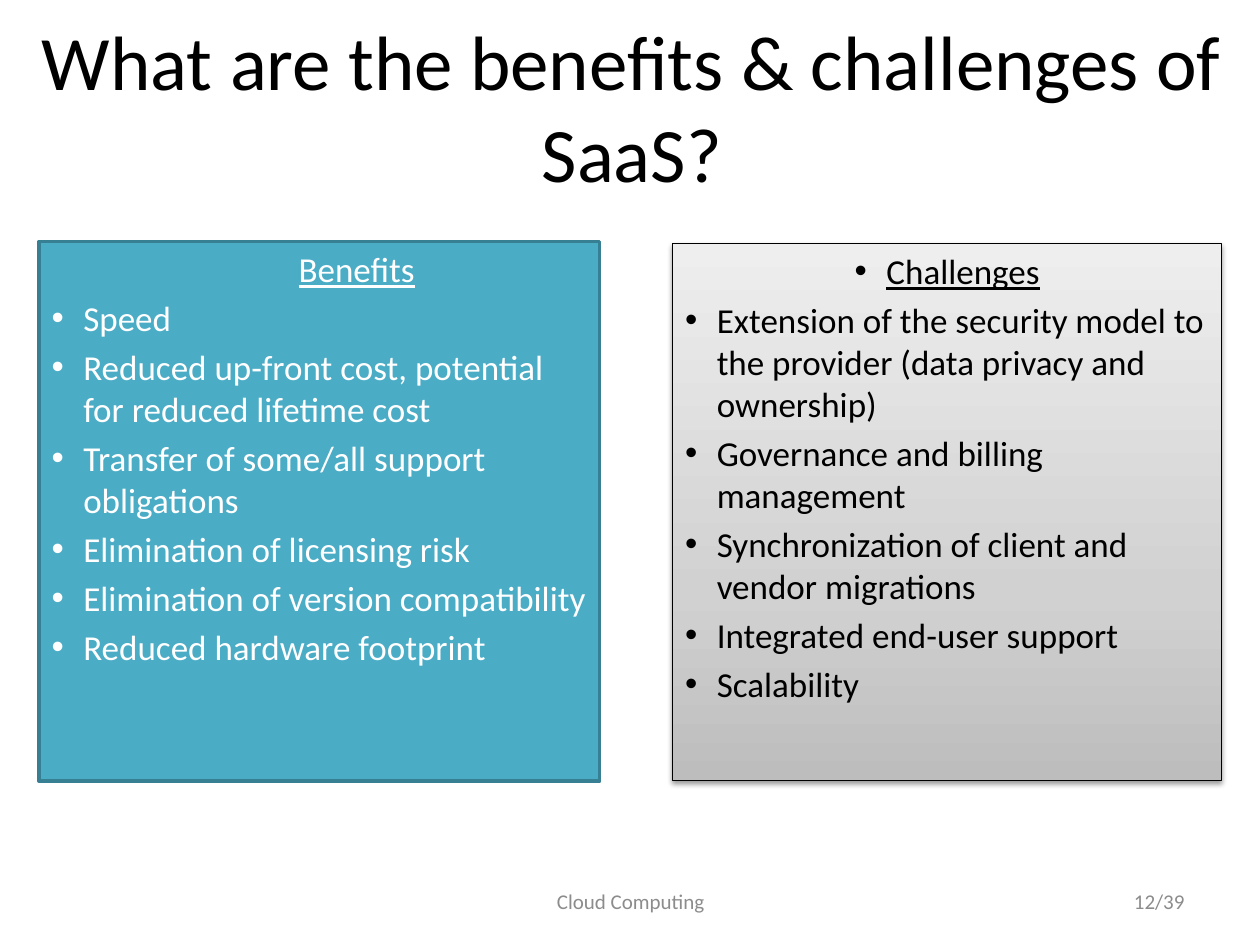
"""Build the slide on the benefits and challenges of SaaS."""
from copy import deepcopy

from lxml.etree import SubElement
from pptx import Presentation
from pptx.dml.color import RGBColor
from pptx.enum.shapes import MSO_SHAPE as Shape
from pptx.enum.text import MSO_ANCHOR as Anchor, PP_ALIGN as Align
from pptx.oxml.ns import qn
from pptx.util import Cm, Pt

LABELS = [
    ("What are the benefits & challenges of SaaS?", (0.51, 0.53, 24.46, 3.2), 44, "000000", Align.CENTER),
    ("12/39", (18.21, 17.65, 5.92, 1.02), 12, "8C8C8C", Align.RIGHT),
    ("Cloud Computing", (8.69, 17.65, 8.05, 1.02), 12, "8C8C8C", Align.CENTER),
]
BENEFITS = [
    "Benefits",
    "Speed",
    "Reduced up-front cost, potential for reduced lifetime cost",
    "Transfer of some/all support obligations",
    "Elimination of licensing risk",
    "Elimination of version compatibility",
    "Reduced hardware footprint",
]
CHALLENGES = [
    "Challenges",
    "Extension of the security model to the provider (data privacy and ownership)",
    "Governance and billing management",
    "Synchronization of client and vendor migrations",
    "Integrated end-user support",
    "Scalability",
]
GRADIENT = [(0, "BDBDBD"), (0.35, "D1D1D1"), (1, "EEEEEE")]


def color(value):
    return RGBColor.from_string(value)


def style(paragraph, size, font_color, align):
    paragraph.alignment = align
    paragraph.font.name = "Calibri"
    paragraph.font.size = Pt(size)
    paragraph.font.color.rgb = color(font_color)


def indent(paragraph, left, hanging, bullet):
    properties = paragraph._p.get_or_add_pPr()
    properties.set("marL", str(Cm(left)))
    properties.set("indent", str(-Cm(hanging)))
    if bullet:
        SubElement(properties, qn("a:buFont"), typeface="Arial")
        SubElement(properties, qn("a:buChar"), char="•")
    else:
        SubElement(properties, qn("a:buNone"))


def add_label(slide, text, box, size, font_color, align):
    frame = slide.shapes.add_textbox(*map(Cm, box)).text_frame
    frame.word_wrap = True
    frame.vertical_anchor = Anchor.MIDDLE
    frame.text = text
    style(frame.paragraphs[0], size, font_color, align)


def add_panel(slide, lines, box, font_color, line_color, line_width, bullet_heading):
    shape = slide.shapes.add_shape(Shape.RECTANGLE, *map(Cm, box))
    shape.shadow.inherit = False
    shape.line.color.rgb = color(line_color)
    shape.line.width = Pt(line_width)
    frame = shape.text_frame
    frame.word_wrap = True
    frame.vertical_anchor = Anchor.TOP
    frame.text = "\n".join(lines)
    for index, paragraph in enumerate(frame.paragraphs):
        heading = index == 0
        if heading and not bullet_heading:
            indent(paragraph, 2.29, 0.79, False)
        else:
            indent(paragraph, 0.64, 0.64, True)
        style(paragraph, 20, font_color, Align.CENTER if heading else Align.LEFT)
        paragraph.font.underline = heading
        if not heading:
            paragraph.space_before = Pt(4)
    return shape


def fill_gradient(shape, stops):
    shape.fill.gradient()
    shape.fill.gradient_angle = 90
    stop_list = shape._element.spPr.find(".//" + qn("a:gsLst"))
    stop_list.append(deepcopy(stop_list[-1]))
    for stop, (position, stop_color) in zip(shape.fill.gradient_stops, stops):
        stop.position = position
        stop.color.rgb = color(stop_color)


def add_shadow(shape):
    effects = shape._element.spPr.find(qn("a:effectLst"))
    shadow = SubElement(effects, qn("a:outerShdw"), blurRad=str(Pt(3.1)),
                        dist=str(Pt(1.6)), dir="5400000", rotWithShape="0")
    shadow_color = SubElement(shadow, qn("a:srgbClr"), val="000000")
    SubElement(shadow_color, qn("a:alpha"), val="38000")


def main():
    presentation = Presentation()
    presentation.slide_width, presentation.slide_height = Cm(25.4), Cm(19.05)
    slide = presentation.slides.add_slide(presentation.slide_layouts[6])
    for label in LABELS:
        add_label(slide, *label)
    benefits = add_panel(slide, BENEFITS, (0.79, 4.87, 11.3, 10.88), "FFFFFF", "377F92", 2, False)
    benefits.fill.solid()
    benefits.fill.fore_color.rgb = color("4BACC6")
    challenges = add_panel(slide, CHALLENGES, (13.56, 4.91, 11.07, 10.82), "000000", "000000", 0.75, True)
    fill_gradient(challenges, GRADIENT)
    add_shadow(challenges)
    presentation.save("out.pptx")


if __name__ == "__main__":
    main()
